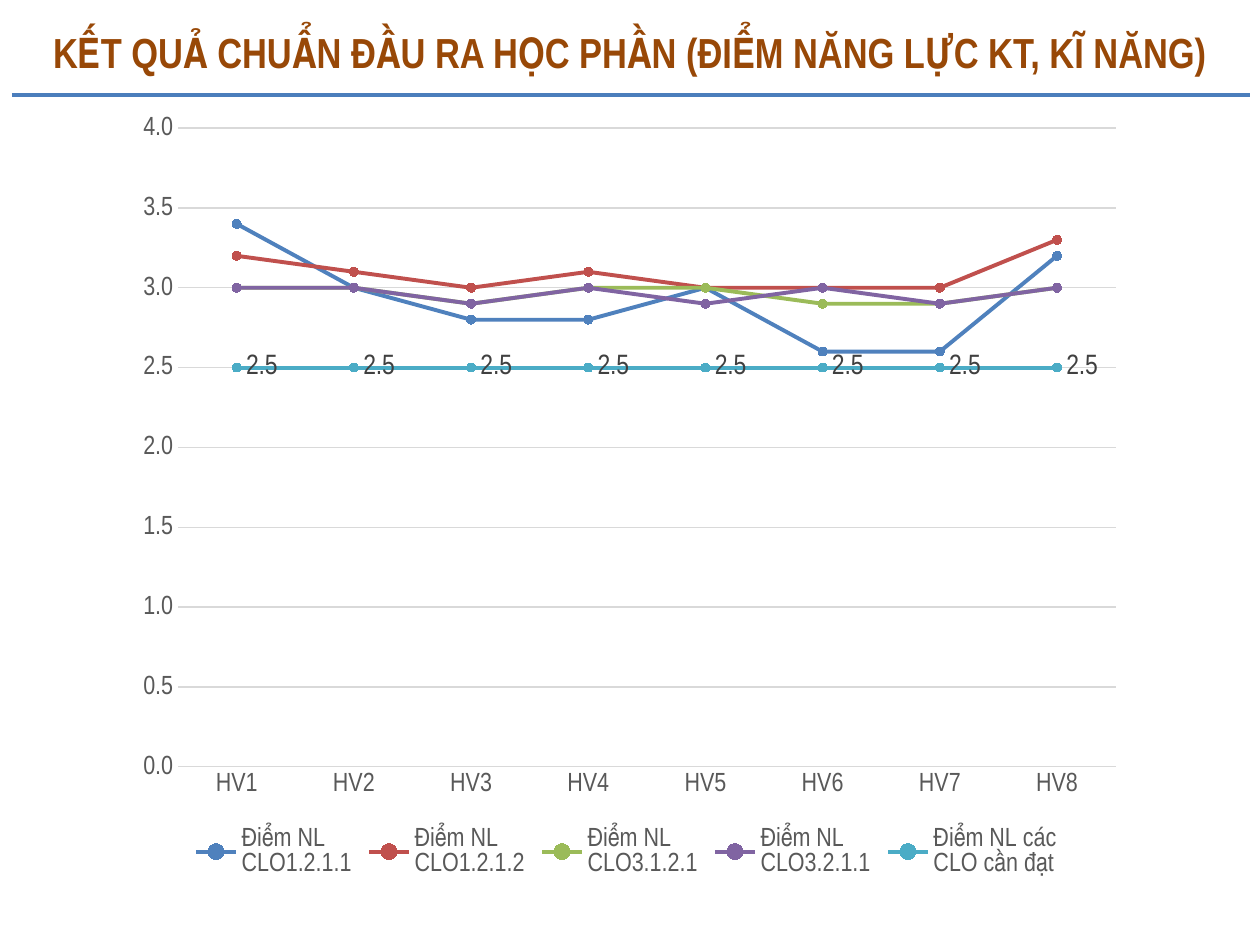
from dataclasses import dataclass

from lxml.etree import SubElement
from pptx import Presentation
from pptx.chart.data import CategoryChartData
from pptx.dml.color import RGBColor
from pptx.enum.chart import (XL_CHART_TYPE, XL_LABEL_POSITION, XL_LEGEND_POSITION,
                             XL_MARKER_STYLE, XL_TICK_MARK)
from pptx.enum.shapes import MSO_CONNECTOR
from pptx.enum.text import MSO_ANCHOR, PP_ALIGN
from pptx.oxml.ns import qn
from pptx.util import Emu, Pt


@dataclass(frozen=True)
class Theme:
    font: str = "Arial Narrow"
    title: str = "984807"
    rule: str = "4B7EBC"
    axis_text: str = "595959"
    label_text: str = "404040"
    grid: str = "D9D9D9"
    title_size: int = 24
    axis_size: int = 15
    label_size: int = 16


THEME = Theme()
PX = 914400 // 126


def px(*lengths):
    """Turn whole pixels into EMU."""
    return [Emu(length * PX) for length in lengths]


def style_font(font, size, color, bold=False):
    font.name = THEME.font
    font.size = Pt(size)
    font.bold = bold
    font.color.rgb = RGBColor.from_string(color)


presentation = Presentation()
presentation.slide_width, presentation.slide_height = px(1260, 945)
slide = presentation.slides.add_slide(presentation.slide_layouts[6])

# Rule under the title
rule = slide.shapes.add_connector(MSO_CONNECTOR.STRAIGHT, *px(12, 95, 1250, 95))
rule.line.color.rgb = RGBColor.from_string(THEME.rule)
rule.line.width = Pt(2)
SubElement(rule._element.spPr, qn("a:effectLst"))

# Title
title = slide.shapes.add_textbox(*px(21, 10, 1218, 84))
title.text_frame.word_wrap = True
title.text_frame.vertical_anchor = MSO_ANCHOR.MIDDLE
paragraph = title.text_frame.paragraphs[0]
paragraph.alignment = PP_ALIGN.CENTER
run = paragraph.add_run()
run.text = "KẾT QUẢ CHUẨN ĐẦU RA HỌC PHẦN (ĐIỂM NĂNG LỰC KT, KĨ NĂNG)"
style_font(run.font, THEME.title_size, THEME.title, bold=True)

# Scores of each learner, one line per learning outcome
SCORES = [
    ("Điểm NL\nCLO1.2.1.1", "4F81BD", (3.4, 3, 2.8, 2.8, 3, 2.6, 2.6, 3.2)),
    ("Điểm NL\nCLO1.2.1.2", "C0504D", (3.2, 3.1, 3, 3.1, 3, 3, 3, 3.3)),
    ("Điểm NL\nCLO3.1.2.1", "9BBB59", (3, 3, 2.9, 3, 3, 2.9, 2.9, 3)),
    ("Điểm NL\nCLO3.2.1.1", "8064A2", (3, 3, 2.9, 3, 2.9, 3, 2.9, 3)),
    ("Điểm NL các \nCLO cần đạt", "4BACC6", (2.5,) * 8),
]
chart_data = CategoryChartData(number_format="0.0")
chart_data.categories = [f"HV{number}" for number in range(1, 9)]
for name, _, values in SCORES:
    chart_data.add_series(name, values)

chart = slide.shapes.add_chart(
    XL_CHART_TYPE.LINE_MARKERS, *px(123, 100, 1013, 782), chart_data).chart
chart.has_title = False
style_font(chart.font, THEME.axis_size, THEME.axis_text)

for series, (_, color, _) in zip(chart.plots[0].series, SCORES):
    rgb = RGBColor.from_string(color)
    series.smooth = False
    series.format.line.color.rgb = rgb
    series.format.line.width = Pt(2.25)
    series.marker.style = XL_MARKER_STYLE.CIRCLE
    series.marker.size = 5
    series.marker.format.fill.solid()
    series.marker.format.fill.fore_color.rgb = rgb
    series.marker.format.line.color.rgb = rgb
chart.plots[0].vary_by_categories = False

# Only the required score, the last line, carries labels
labels = series.data_labels
labels.show_value = True
labels.number_format = "0.0"
labels.number_format_is_linked = False
labels.position = XL_LABEL_POSITION.RIGHT
style_font(labels.font, THEME.label_size, THEME.label_text)

# Axes
grid_color = RGBColor.from_string(THEME.grid)
for axis in (chart.category_axis, chart.value_axis):
    axis.major_tick_mark = axis.minor_tick_mark = XL_TICK_MARK.NONE
    style_font(axis.tick_labels.font, THEME.axis_size, THEME.axis_text)
value_axis = chart.value_axis
value_axis.minimum_scale = 0
value_axis.maximum_scale = 4
value_axis.major_unit = 0.5
value_axis.tick_labels.number_format = "0.0"
value_axis.tick_labels.number_format_is_linked = False
value_axis.format.line.fill.background()
value_axis.has_major_gridlines = True
for line in (chart.category_axis.format.line, value_axis.major_gridlines.format.line):
    line.color.rgb = grid_color
    line.width = Pt(0.75)

# Legend
chart.has_legend = True
chart.legend.position = XL_LEGEND_POSITION.BOTTOM
chart.legend.include_in_layout = False
style_font(chart.legend.font, THEME.axis_size, THEME.axis_text)

presentation.save("out.pptx")
